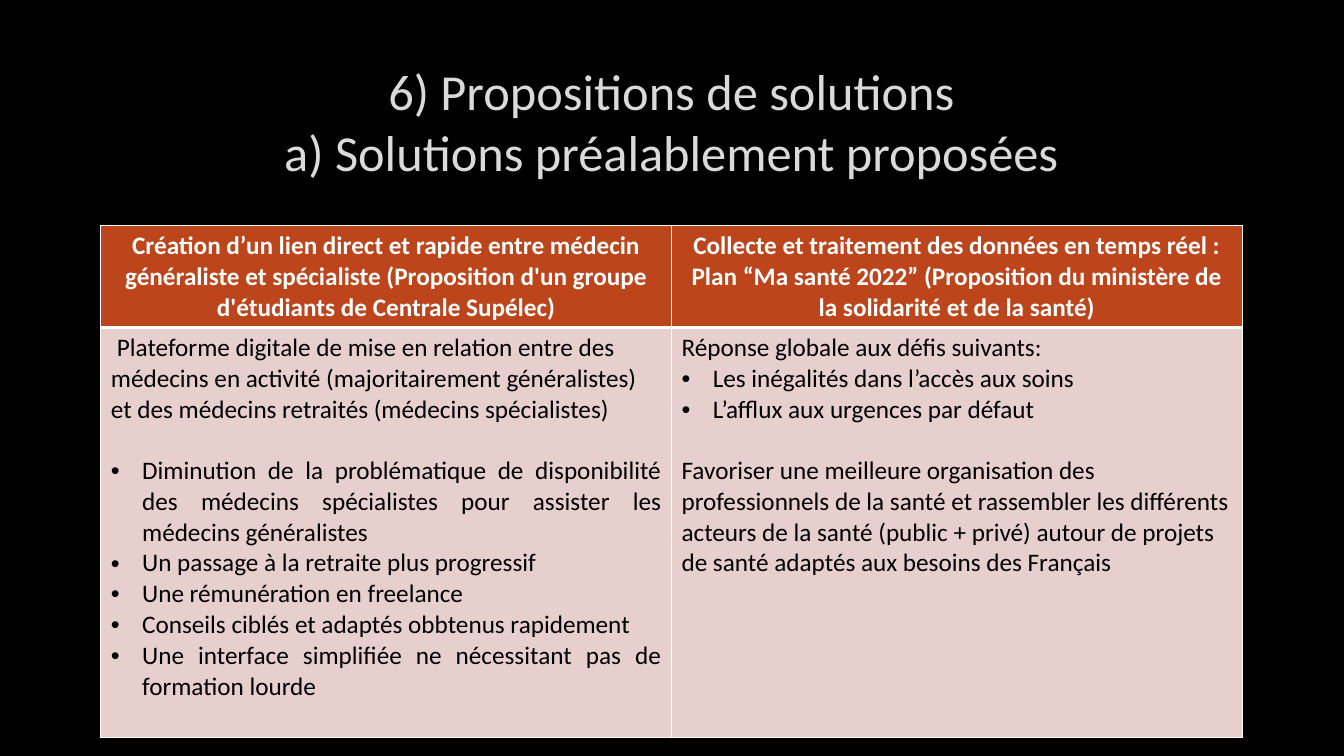
"""Build the slide that compares two previously proposed solutions."""
from dataclasses import dataclass

from lxml.etree import SubElement
from pptx import Presentation
from pptx.dml.color import RGBColor
from pptx.enum.text import MSO_ANCHOR, PP_ALIGN as Align
from pptx.oxml.ns import qn
from pptx.util import Inches, Pt

BLACK = RGBColor(0x00, 0x00, 0x00)
WHITE = RGBColor(0xFF, 0xFF, 0xFF)
LIGHT_GREY = RGBColor(0xDA, 0xDA, 0xDA)
RUST = RGBColor(0xBC, 0x45, 0x1B)
PINK = RGBColor(0xE7, 0xCF, 0xCD)

FONT = "Calibri"
LEFT, WIDTH = Inches(1), Inches(11.32)
INDENT = Inches(0.31)
GAP = Pt(22)
THIN, THICK = Pt(1), Pt(3)

TITLE = ("6) Propositions de solutions", "a) Solutions préalablement proposées")


@dataclass
class Para:
    """A paragraph of a table cell."""
    text: str
    bullet: bool = False
    gap: bool = False
    first_indent: float = 0


@dataclass
class Solution:
    """A column of the table."""
    heading: str
    body: list[Para]


SOLUTIONS = [
    Solution(
        "Création d’un lien direct et rapide entre médecin généraliste et spécialiste "
        "(Proposition d'un groupe d'étudiants de Centrale Supélec)",
        [
            Para("Plateforme digitale de mise en relation entre des médecins en activité "
                 "(majoritairement généralistes) et des médecins retraités "
                 "(médecins spécialistes)", first_indent=0.06),
            Para("Diminution de la problématique de disponibilité des médecins "
                 "spécialistes pour assister les médecins généralistes",
                 bullet=True, gap=True),
            Para("Un passage à la retraite plus progressif", bullet=True),
            Para("Une rémunération en freelance", bullet=True),
            Para("Conseils ciblés et adaptés obbtenus rapidement", bullet=True),
            Para("Une interface simplifiée ne nécessitant pas de formation lourde",
                 bullet=True),
        ],
    ),
    Solution(
        "Collecte et traitement des données en temps réel : Plan “Ma santé 2022” "
        "(Proposition du ministère de la solidarité et de la santé)",
        [
            Para("Réponse globale aux défis suivants:"),
            Para("Les inégalités dans l’accès aux soins", bullet=True),
            Para("L’afflux aux urgences par défaut", bullet=True),
            Para("Favoriser une meilleure organisation des professionnels de la santé et "
                 "rassembler les différents acteurs de la santé (public + privé) autour de "
                 "projets de santé adaptés aux besoins des Français", gap=True),
        ],
    ),
]


def add_run(p, text: str, size: int, color: RGBColor, bold: bool = False) -> None:
    """Add a formatted run to a paragraph."""
    r = p.add_run()
    r.text = text
    r.font.name = FONT
    r.font.size = Pt(size)
    r.font.bold = bold
    r.font.color.rgb = color


def add_title(s) -> None:
    """Add the two-line title."""
    tf = s.shapes.add_textbox(LEFT, Inches(0.67), WIDTH, Inches(1.06)).text_frame
    tf.word_wrap = True
    tf.vertical_anchor = MSO_ANCHOR.MIDDLE
    p = tf.paragraphs[0]
    p.alignment = Align.CENTER
    for i, line in enumerate(TITLE):
        if i:
            p.add_line_break()
        add_run(p, line, 36, LIGHT_GREY)


def style_cell(cell, fill: RGBColor, top: int, bottom: int) -> None:
    """Give a cell white borders and a solid fill."""
    tc_pr = cell._tc.get_or_add_tcPr()
    for tag, width in (("lnL", THIN), ("lnR", THIN), ("lnT", top), ("lnB", bottom)):
        ln = SubElement(tc_pr, qn(f"a:{tag}"), w=str(int(width)))
        SubElement(SubElement(ln, qn("a:solidFill")), qn("a:srgbClr"), val=str(WHITE))
    cell.fill.solid()
    cell.fill.fore_color.rgb = fill


def write_para(p, para: Para) -> None:
    """Write a body paragraph with its indent and bullet."""
    p_pr = p._p.get_or_add_pPr()
    if para.bullet:
        p.alignment = Align.JUSTIFY
        p_pr.set("marL", str(INDENT))
        p_pr.set("indent", str(-INDENT))
    elif para.first_indent:
        p_pr.set("indent", str(Inches(para.first_indent)))
    if para.gap:
        p.space_before = GAP
    if para.bullet:
        SubElement(p_pr, qn("a:buFont"), typeface="Arial")
        SubElement(p_pr, qn("a:buChar"), char="•")
    add_run(p, para.text, 18, BLACK)


def add_solutions(s) -> None:
    """Add the table with one column per solution."""
    count = len(SOLUTIONS)
    table = s.shapes.add_table(2, count, LEFT, Inches(2.24), WIDTH, Inches(5.08)).table
    table.rows[0].height = Inches(1.01)
    table.rows[1].height = Inches(4.07)
    for col, solution in enumerate(SOLUTIONS):
        table.columns[col].width = WIDTH // count
        head, body = table.cell(0, col), table.cell(1, col)
        style_cell(head, RUST, THIN, THICK)
        style_cell(body, PINK, THICK, THIN)
        p = head.text_frame.paragraphs[0]
        p.alignment = Align.CENTER
        add_run(p, solution.heading, 18, WHITE, bold=True)
        tf = body.text_frame
        for i, para in enumerate(solution.body):
            write_para(tf.add_paragraph() if i else tf.paragraphs[0], para)


def main() -> None:
    """Build and save the presentation."""
    prs = Presentation()
    prs.slide_width, prs.slide_height = Inches(13.33), Inches(7.5)
    s = prs.slides.add_slide(prs.slide_layouts[6])
    s.background.fill.solid()
    s.background.fill.fore_color.rgb = BLACK
    add_title(s)
    add_solutions(s)
    prs.save("out.pptx")


if __name__ == "__main__":
    main()
